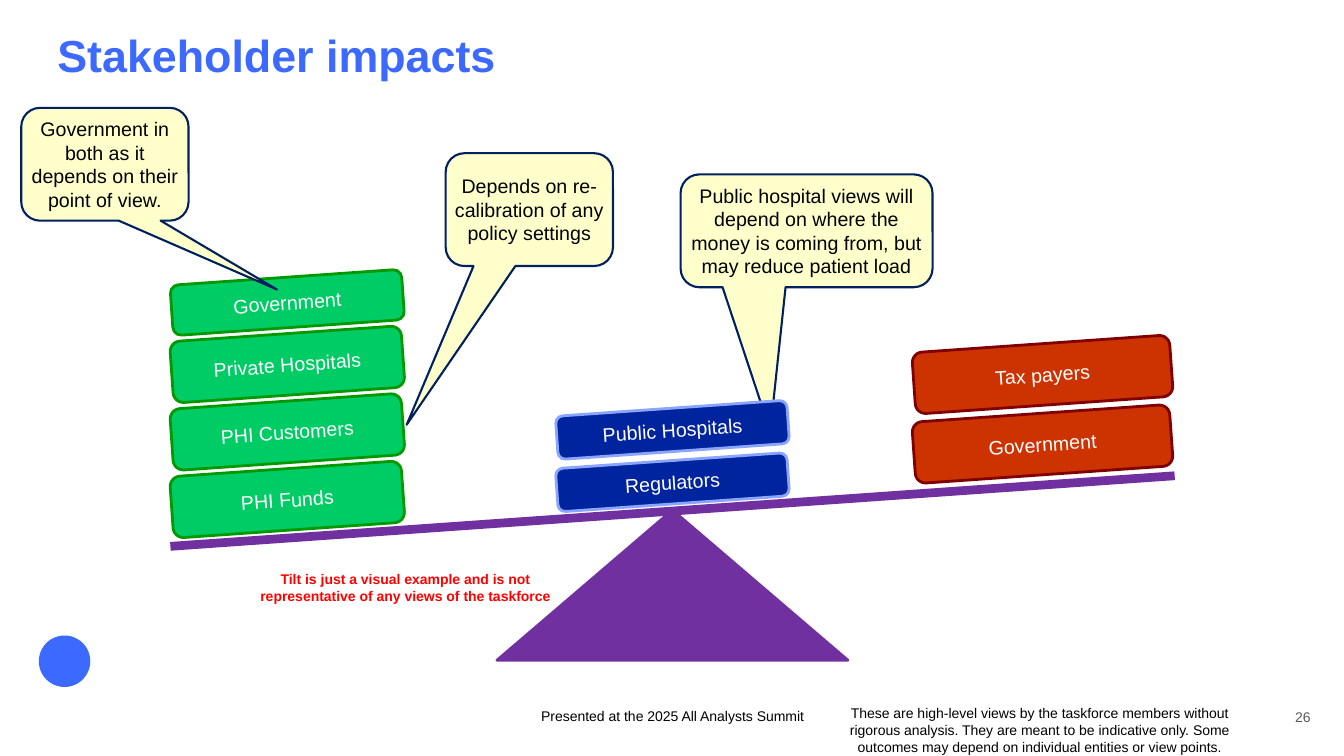
from pptx import Presentation
from pptx.dml.color import RGBColor
from pptx.enum.shapes import MSO_CONNECTOR, MSO_SHAPE
from pptx.enum.text import MSO_ANCHOR, PP_ALIGN
from pptx.oxml import parse_xml
from pptx.util import Inches, Pt

BLUE = RGBColor(0x3C, 0x69, 0xFF)
GREY = RGBColor(0x5B, 0x5B, 0x5B)
BLACK = RGBColor(0, 0, 0)
WHITE = RGBColor(0xFF, 0xFF, 0xFF)
RED = RGBColor(0xFF, 0, 0)
PURPLE = RGBColor(0x70, 0x30, 0xA0)
GREEN = RGBColor(0x00, 0xCC, 0x66)
DARK_GREEN = RGBColor(0x00, 0x99, 0x00)
NAVY = RGBColor(0x00, 0x24, 0x9E)
LIGHT_BLUE = RGBColor(0x8A, 0xA5, 0xFF)
RUST = RGBColor(0xCC, 0x33, 0x00)
MAROON = RGBColor(0x80, 0, 0)
CREAM = RGBColor(0xFF, 0xFF, 0xCC)
MIDNIGHT = RGBColor(0x00, 0x20, 0x60)

presentation = Presentation()
presentation.slide_width = Inches(13.33)
presentation.slide_height = Inches(7.5)
slide = presentation.slides.add_slide(presentation.slide_layouts[6])
column = presentation.slide_width / 100
row = presentation.slide_height / 100


def write(shape, text, size, color, align, anchor, inset, bold=False):
    text_frame = shape.text_frame
    text_frame.text = text
    text_frame.word_wrap = True
    text_frame.vertical_anchor = anchor
    text_frame.margin_left = text_frame.margin_right = Inches(inset)
    text_frame.margin_top = text_frame.margin_bottom = Inches(inset / 2)
    paragraph = text_frame.paragraphs[0]
    paragraph.alignment = align
    font = paragraph.runs[0].font
    font.name = "Arial"
    font.size = Pt(size)
    font.bold = bold
    font.color.rgb = color


def draw(kind, left, top, width, height, fill, line, line_width):
    shape = slide.shapes.add_shape(
        kind, int(left * column), int(top * row), int(width * column), int(height * row))
    shape.shadow.inherit = False
    shape.fill.solid()
    shape.fill.fore_color.rgb = fill
    shape.line.color.rgb = line
    shape.line.width = Pt(line_width)
    return shape


draw(MSO_SHAPE.OVAL, 2.93, 84.13, 3.75, 6.67, BLUE, BLUE, 0)

labels = [
    ("Stakeholder impacts", 3.53, 3.07, 95.8, 10.4, 32, BLUE, True,
     PP_ALIGN.LEFT, MSO_ANCHOR.TOP, 0.1),
    ("26", 94.07, 93.33, 3.45, 2.67, 10, GREY, False,
     PP_ALIGN.RIGHT, MSO_ANCHOR.BOTTOM, 0),
    ("Presented at the 2025 All Analysts Summit", 33.16, 93.33, 33.76, 2.67, 10, BLACK, False,
     PP_ALIGN.CENTER, MSO_ANCHOR.MIDDLE, 0),
    ("These are high-level views by the taskforce members without rigorous analysis. "
     "They are meant to be indicative only. Some outcomes may depend on individual "
     "entities or view points.", 63.02, 94, 28.66, 5.07, 10, BLACK, False,
     PP_ALIGN.CENTER, MSO_ANCHOR.MIDDLE, 0),
    ("Tilt is just a visual example and is not representative of any views of the taskforce",
     19.05, 75.2, 22.21, 5.07, 10, RED, True, PP_ALIGN.CENTER, MSO_ANCHOR.MIDDLE, 0),
]
for text, left, top, width, height, size, color, bold, align, anchor, inset in labels:
    box = slide.shapes.add_textbox(
        int(left * column), int(top * row), int(width * column), int(height * row))
    write(box, text, size, color, align, anchor, inset, bold)

callouts = [
    ("Public hospital views will depend on where the money is coming from, "
     "but may reduce patient load", 50.64, 23.07, 18.75, -0.144, 1.775),
    ("Government in both as it depends on their point of view.",
     1.58, 14.27, 12.45, 1.028, 1.11),
    ("Depends on re-calibration of any policy settings",
     33.16, 20.27, 12.45, -0.733, 1.906),
]
callout_shapes = []
for text, left, top, width, tail_x, tail_y in callouts:
    callout = draw(MSO_SHAPE.ROUNDED_RECTANGULAR_CALLOUT,
                   left, top, width, 14.93, CREAM, MIDNIGHT, 1.5)
    callout.adjustments[0] = tail_x
    callout.adjustments[1] = tail_y
    write(callout, text, 14, BLACK, PP_ALIGN.CENTER, MSO_ANCHOR.MIDDLE, 0.02)
    callout_shapes.append(callout)

stacks = [
    (12.75, 70.13, 17.25, 0.8, GREEN, DARK_GREEN,
     [("PHI Funds", 8.13), ("PHI Customers", 8.13),
      ("Private Hospitals", 8.13), ("Government", 6.67)]),
    (41.41, 66.66, 17.25, 1.2, NAVY, LIGHT_BLUE,
     [("Regulators", 5.73), ("Public Hospitals", 5.73)]),
    (67.97, 62.8, 19.2, 1.07, RUST, MAROON,
     [("Government", 8.13), ("Tax payers", 8.13)]),
]
for left, bottom, width, gap, fill, line, stakeholders in stacks:
    for name, height in stakeholders:
        block = draw(MSO_SHAPE.ROUNDED_RECTANGLE,
                     left, bottom - height, width, height, fill, line, 2)
        block.rotation = 356
        write(block, name, 14, WHITE, PP_ALIGN.CENTER, MSO_ANCHOR.MIDDLE, 0.1)
        bottom -= height + gap

draw(MSO_SHAPE.ISOSCELES_TRIANGLE, 36.98, 67.47, 26.11, 19.87, PURPLE, PURPLE, 2)
plank = slide.shapes.add_connector(
    MSO_CONNECTOR.STRAIGHT, int(12.68 * column), int(72.27 * row),
    int(87.4 * column), int(62.93 * row))
plank.line.color.rgb = PURPLE
plank.line.width = Pt(6.25)
plank._element.spPr.append(parse_xml(
    '<a:effectLst xmlns:a="http://schemas.openxmlformats.org/drawingml/2006/main"/>'))

for callout in callout_shapes[1:]:
    slide.shapes._spTree.append(callout._element)

presentation.save("out.pptx")
